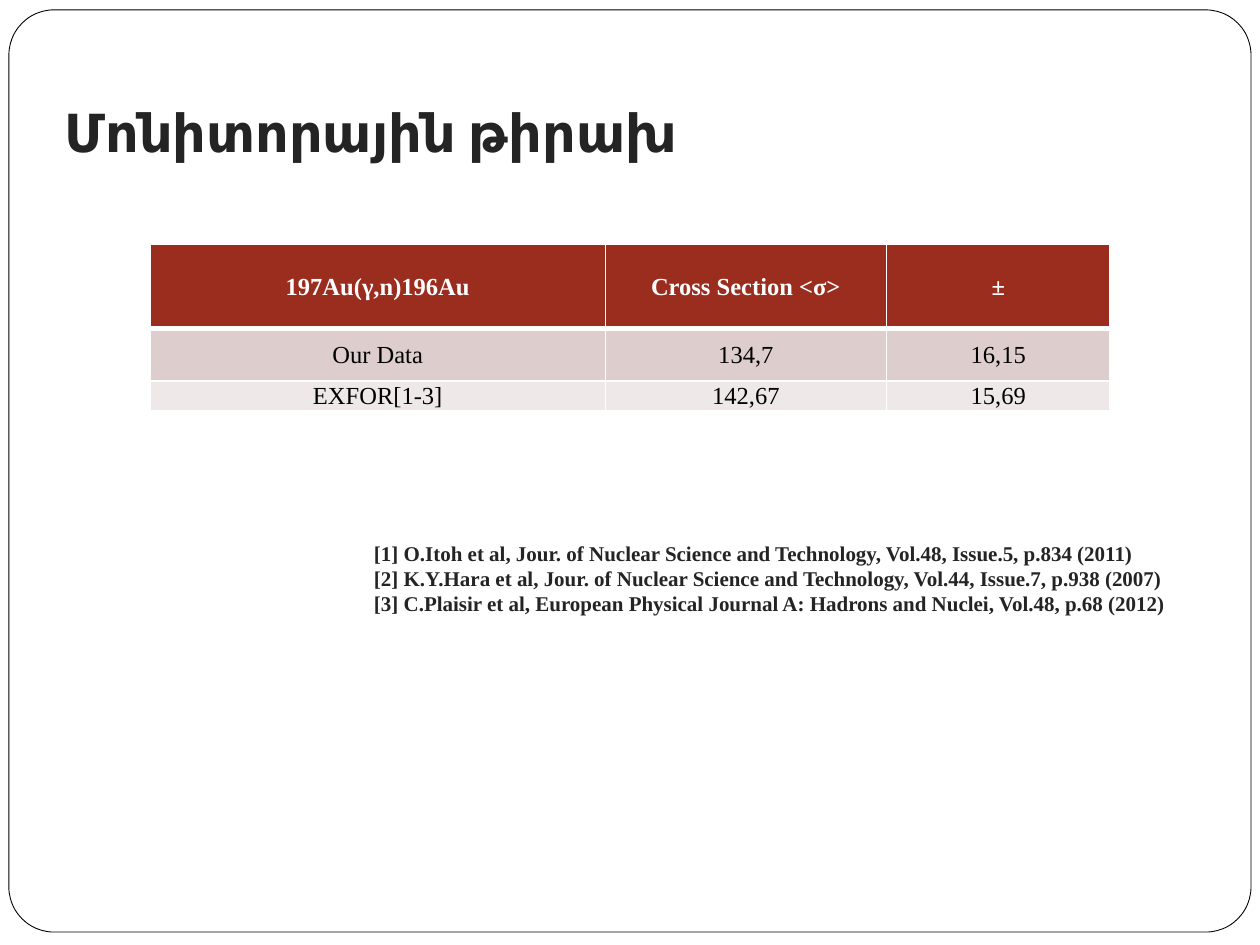
from lxml import etree
from pptx import Presentation
from pptx.dml.color import RGBColor
from pptx.enum.shapes import MSO_SHAPE
from pptx.enum.text import MSO_ANCHOR, PP_ALIGN
from pptx.oxml.ns import qn
from pptx.util import Cm, Pt

ROUNDED = MSO_SHAPE.ROUNDED_RECTANGLE
MIDDLE = MSO_ANCHOR.MIDDLE
CENTER = PP_ALIGN.CENTER

SERIF = "Times New Roman"
WHITE, BLACK, INK = "FFFFFF", "000000", "242424"
ROW_FILLS = ("9B2D1F", "DECDCD", "EFE8E8")

TITLE = "Մոնիտորային թիրախ"
ROWS = (
    ("197Au(γ,n)196Au", "Cross Section <σ>", "±"),
    ("Our Data", "134,7", "16,15"),
    ("EXFOR[1-3]", "142,67", "15,69"),
)
COLUMN_SHARES = (0.474, 0.293, 0.233)
ROW_SHARES = (0.503, 0.316, 0.181)
REFERENCES = (
    "[1] O.Itoh et al, Jour. of Nuclear Science and Technology, Vol.48, Issue.5, p.834 (2011)",
    "[2] K.Y.Hara et al, Jour. of Nuclear Science and Technology, Vol.44, Issue.7, p.938 (2007)",
    "[3] C.Plaisir et al, European Physical Journal A: Hadrons and Nuclei, Vol.48, p.68 (2012)",
)


def rgb(color):
    return RGBColor.from_string(color)


def style(paragraph, name, size, color, bold):
    font = paragraph.font
    font.name, font.size, font.bold = name, Pt(size), bold
    font.color.rgb = rgb(color)


def set_borders(cell, widths):
    """Draw white cell borders; widths holds points by side: L, R, T, B."""
    properties = cell._tc.get_or_add_tcPr()
    for position, (side, width) in enumerate(widths.items()):
        line = etree.Element(qn(f"a:ln{side}"), w=str(Pt(width)))
        fill = etree.SubElement(line, qn("a:solidFill"))
        etree.SubElement(fill, qn("a:srgbClr"), val=WHITE)
        properties.insert(position, line)


def add_frame(slide, left, top, width, height):
    frame = slide.shapes.add_shape(ROUNDED, left, top, width, height)
    frame.adjustments[0] = 0.049
    frame.shadow.inherit = False
    frame.fill.solid()
    frame.fill.fore_color.rgb = rgb(WHITE)
    frame.line.color.rgb = rgb(BLACK)
    frame.line.width = Pt(0.5)


def add_title(slide, left, top, width, height):
    text_frame = slide.shapes.add_textbox(left, top, width, height).text_frame
    text_frame.word_wrap = True
    text_frame.margin_left = text_frame.margin_right = 0
    text_frame.margin_top = text_frame.margin_bottom = 0
    paragraph = text_frame.paragraphs[0]
    paragraph.text = TITLE
    paragraph.line_spacing = Pt(50)
    style(paragraph, "Roboto", 30, INK, True)


def add_results_table(slide, left, top, width, height):
    table = slide.shapes.add_table(
        len(ROWS), len(COLUMN_SHARES), left, top, width, height).table
    for column, share in zip(table.columns, COLUMN_SHARES):
        column.width = int(width * share)
    for row, share in zip(table.rows, ROW_SHARES):
        row.height = int(height * share)

    for row_index, (texts, fill) in enumerate(zip(ROWS, ROW_FILLS)):
        is_header = row_index == 0
        borders = {"L": 1, "R": 1,
                   "T": 3 if row_index == 1 else 1,
                   "B": 3 if is_header else 1}
        for column_index, text in enumerate(texts):
            cell = table.cell(row_index, column_index)
            cell.text = text
            cell.vertical_anchor = MIDDLE
            cell.margin_left = cell.margin_right = cell.margin_top = Cm(0.02)
            cell.margin_bottom = 0
            cell.fill.solid()
            cell.fill.fore_color.rgb = rgb(fill)
            set_borders(cell, borders)
            paragraph = cell.text_frame.paragraphs[0]
            paragraph.alignment = CENTER
            style(paragraph, SERIF, 14, WHITE if is_header else BLACK, is_header)


def add_references(slide, left, top, width, height):
    text_frame = slide.shapes.add_textbox(left, top, width, height).text_frame
    text_frame.word_wrap = True
    text_frame.text = "\n".join(REFERENCES)
    for paragraph in text_frame.paragraphs:
        style(paragraph, SERIF, 12, INK, True)


def main():
    presentation = Presentation()
    presentation.slide_width, presentation.slide_height = Cm(25.4), Cm(19.05)
    slide = presentation.slides.add_slide(presentation.slide_layouts[6])
    add_frame(slide, Cm(0.18), Cm(0.2), Cm(25.04), Cm(18.59))
    add_results_table(slide, Cm(3.03), Cm(4.93), Cm(19.35), Cm(3.36))
    add_references(slide, Cm(7.29), Cm(10.77), Cm(17.42), Cm(1.8))
    add_title(slide, Cm(1.3), Cm(1.52), Cm(14.91), Cm(1.63))
    presentation.save("out.pptx")


if __name__ == "__main__":
    main()
